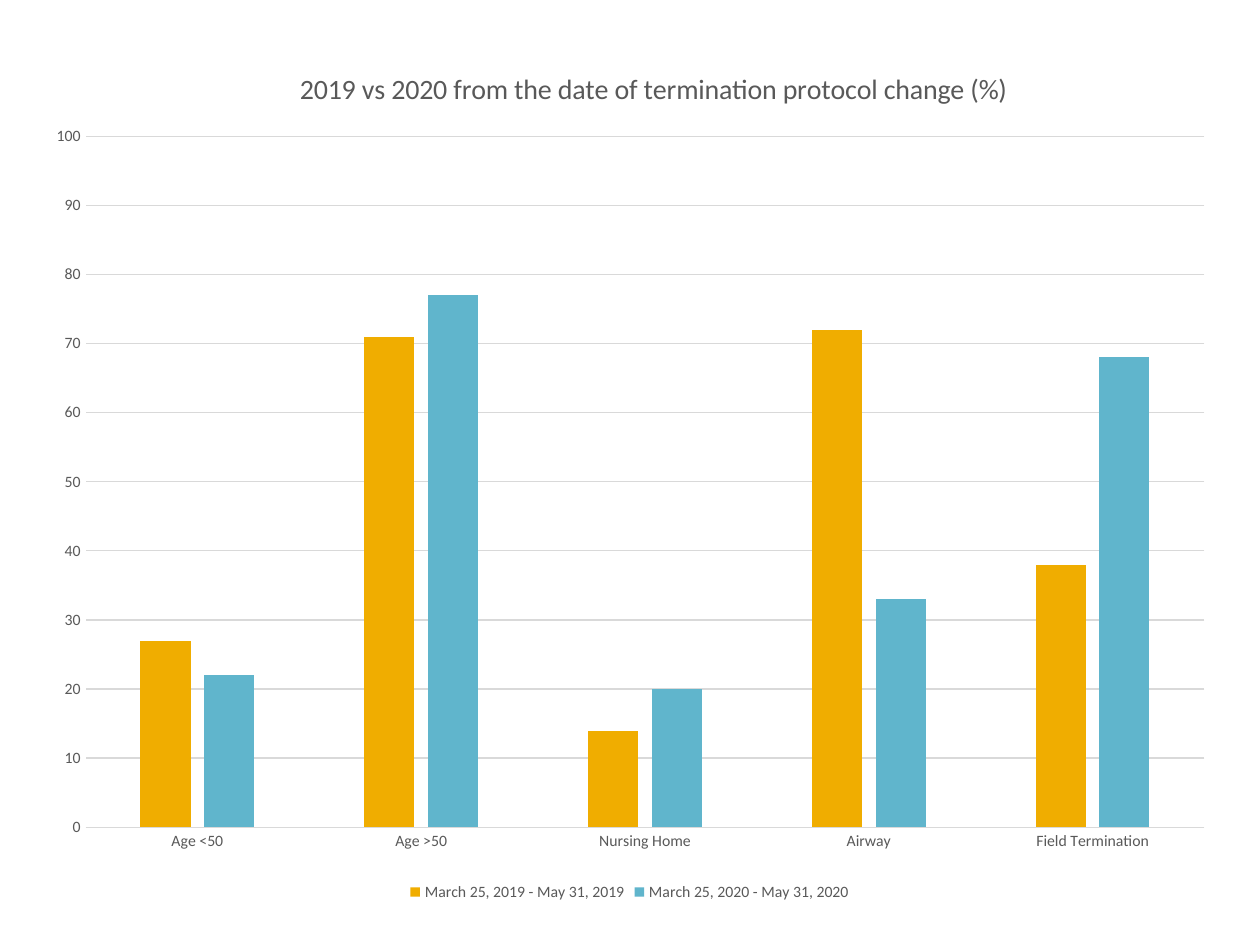
from dataclasses import dataclass

from lxml.etree import SubElement
from pptx import Presentation
from pptx.chart.data import CategoryChartData
from pptx.dml.color import RGBColor
from pptx.enum.chart import XL_CHART_TYPE as ChartType
from pptx.enum.chart import XL_LEGEND_POSITION as LegendPosition
from pptx.enum.chart import XL_TICK_MARK as TickMark
from pptx.oxml.ns import qn
from pptx.util import Cm, Pt


@dataclass(frozen=True)
class Theme:
    """Colours, font and type sizes of the slide."""
    font: str = "Calibri"
    ink: str = "595959"
    grid: str = "D9D9D9"
    periods: tuple = ("F0AD00", "60B5CC")
    title_size: int = 16
    label_size: int = 9
    hairline: float = 0.75


THEME = Theme()
TITLE = "2019 vs 2020 from the date of termination protocol change (%)"
GROUPS = ("Age <50", "Age >50", "Nursing Home", "Airway", "Field Termination")
PERIODS = {
    "March 25, 2019 - May 31, 2019": (27, 71, 14, 72, 38),
    "March 25, 2020 - May 31, 2020": (22, 77, 20, 33, 68),
}


def style_font(font, size=THEME.label_size, color=THEME.ink, bold=False):
    """Apply the theme typeface to a font."""
    font.name, font.size, font.bold = THEME.font, Pt(size), bold
    font.color.rgb = RGBColor.from_string(color)


def write_text(frame, text, **text_format):
    """Write formatted text into a text frame."""
    run = frame.paragraphs[0].add_run()
    run.text = text
    style_font(run.font, **text_format)


def style_line(line):
    """Give a line the light grid look."""
    line.color.rgb = RGBColor.from_string(THEME.grid)
    line.width = Pt(THEME.hairline)


def place(part, index, **settings):
    """Set a manual layout, in fractions of the chart, on a chart part."""
    for previous in part.findall(qn("c:layout")):
        part.remove(previous)
    layout = SubElement(part, qn("c:layout"))
    part.insert(index, layout)
    manual = SubElement(layout, qn("c:manualLayout"))
    for tag, value in settings.items():
        SubElement(manual, qn(f"c:{tag}")).set("val", str(value))


def add_title(chart):
    """Add the chart title slightly right of centre."""
    chart.has_title = True
    title = chart.chart_title
    write_text(title.text_frame, TITLE, size=THEME.title_size)
    title.include_in_layout = False
    place(title.element, 1, xMode="edge", yMode="edge", x=0.22, y=0.03)


def style_axes(chart):
    """Style both axes and the gridlines."""
    groups, percent = chart.category_axis, chart.value_axis
    for axis in (groups, percent):
        axis.major_tick_mark = axis.minor_tick_mark = TickMark.NONE
        style_font(axis.tick_labels.font)
    style_line(groups.format.line)
    percent.format.line.fill.background()
    percent.minimum_scale, percent.maximum_scale = 0, 100
    percent.major_unit = 10
    percent.has_major_gridlines = True
    style_line(percent.major_gridlines.format.line)


def style_bars(chart):
    """Set bar spacing and one colour per period."""
    bars = chart.plots[0]
    bars.gap_width, bars.overlap = 219, -27
    bars.vary_by_categories = False
    for period, color in zip(bars.series, THEME.periods):
        period.format.fill.solid()
        period.format.fill.fore_color.rgb = RGBColor.from_string(color)


def add_legend(chart):
    """Add the legend below the bars."""
    chart.has_legend = True
    chart.legend.position = LegendPosition.BOTTOM
    chart.legend.include_in_layout = False
    style_font(chart.legend.font)


def add_comparison(slide):
    """Add the clustered column chart comparing both periods."""
    figures = CategoryChartData()
    figures.categories = GROUPS
    for period, shares in PERIODS.items():
        figures.add_series(period, shares)
    chart = slide.shapes.add_chart(
        ChartType.COLUMN_CLUSTERED,
        Cm(0.64), Cm(0.79), Cm(24.1), Cm(17.48), figures).chart
    style_font(chart.font)
    add_title(chart)
    style_axes(chart)
    style_bars(chart)
    add_legend(chart)
    place(chart.element.find(f".//{qn('c:plotArea')}"), 0,
          layoutTarget="inner", xMode="edge", yMode="edge",
          x=0.045, y=0.112, w=0.936, h=0.797)


def main():
    """Build and save the slide."""
    deck = Presentation()
    deck.slide_width, deck.slide_height = Cm(25.4), Cm(19.05)
    add_comparison(deck.slides.add_slide(deck.slide_layouts[6]))
    deck.save("out.pptx")


if __name__ == "__main__":
    main()
